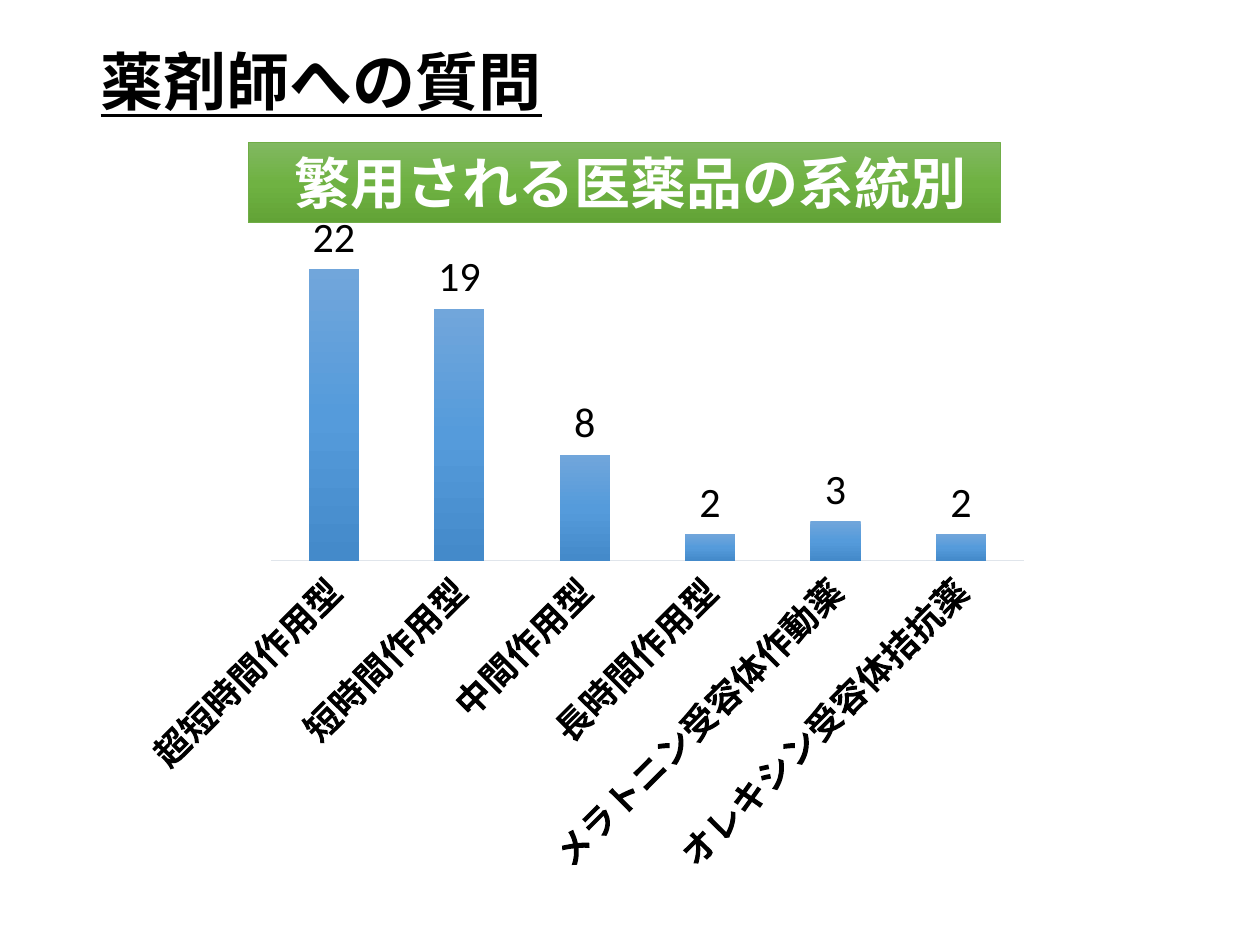
from copy import deepcopy

from pptx import Presentation
from pptx.chart.data import CategoryChartData
from pptx.dml.color import RGBColor
from pptx.enum.chart import XL_CHART_TYPE, XL_LABEL_POSITION, XL_TICK_MARK
from pptx.enum.shapes import MSO_SHAPE
from pptx.enum.text import MSO_AUTO_SIZE
from pptx.oxml.ns import qn
from pptx.util import Inches, Pt

TITLE = "薬剤師への質問"
BANNER = "繁用される医薬品の系統別"
COUNTS = {
    "超短時間作用型": 22,
    "短時間作用型": 19,
    "中間作用型": 8,
    "長時間作用型": 2,
    "メラトニン受容体作動薬": 3,
    "オレキシン受容体拮抗薬": 2,
}

FONT = "Calibri"
AUTO_ROTATION = "-60000000"
BLACK = RGBColor(0x00, 0x00, 0x00)
WHITE = RGBColor(0xFF, 0xFF, 0xFF)
GREEN = RGBColor(0x70, 0xAD, 0x47)
AXIS_GREY = RGBColor(0xE0, 0xE5, 0xEB)
GREENS = [RGBColor(0x81, 0xB8, 0x61), RGBColor(0x6F, 0xB2, 0x42), RGBColor(0x62, 0xA3, 0x36)]
BLUES = [RGBColor(0x71, 0xA6, 0xDB), RGBColor(0x55, 0x9B, 0xDB), RGBColor(0x44, 0x8A, 0xCA)]


def set_font(font, size, color, bold=False):
    font.name = FONT
    font.size = Pt(size)
    font.bold = bold
    font.color.rgb = color


def set_gradient(fill, sp_pr, colors):
    fill.gradient()
    fill.gradient_angle = 270
    stops = sp_pr.find(f"{qn('a:gradFill')}/{qn('a:gsLst')}")
    stops.insert(1, deepcopy(stops[0]))
    for i, (stop, color) in enumerate(zip(fill.gradient_stops, colors)):
        stop.position = i / (len(colors) - 1)
        stop.color.rgb = color


def add_text(s, text, box, size, color, wrap):
    tf = s.shapes.add_textbox(*map(Inches, box)).text_frame
    tf.word_wrap = wrap
    tf.auto_size = MSO_AUTO_SIZE.SHAPE_TO_FIT_TEXT
    p = tf.paragraphs[0]
    p.text = text
    set_font(p.font, size, color, True)
    return p


def add_counts_chart(s):
    data = CategoryChartData()
    data.categories = list(COUNTS)
    data.add_series("Series 1", list(COUNTS.values()))
    box = map(Inches, (0.97, 1.69, 7.3, 5.37))
    chart = s.shapes.add_chart(XL_CHART_TYPE.COLUMN_CLUSTERED, *box, data).chart
    chart.has_legend = False
    chart.has_title = False
    set_font(chart.font, 10, BLACK)

    values = chart.value_axis
    values.minimum_scale, values.maximum_scale = 0, 25
    values.has_major_gridlines = False
    values.visible = False

    cats = chart.category_axis
    cats.major_tick_mark = XL_TICK_MARK.NONE
    cats.format.line.color.rgb = AXIS_GREY
    cats.format.line.width = Pt(0.75)
    set_font(cats.tick_labels.font, 20, BLACK, True)
    body = cats._element.find(f"{qn('c:txPr')}/{qn('a:bodyPr')}")
    body.set("rot", AUTO_ROTATION)
    body.set("vert", "horz")

    plot = chart.plots[0]
    plot.gap_width = 150
    plot.vary_by_categories = False
    plot.has_data_labels = True
    labels = plot.data_labels
    labels.show_value = True
    labels.position = XL_LABEL_POSITION.OUTSIDE_END
    set_font(labels.font, 24, BLACK)
    series = plot.series[0]
    fill = series.format.fill
    set_gradient(fill, series._element.find(qn("c:spPr")), BLUES)


def main():
    prs = Presentation()
    prs.slide_width, prs.slide_height = Inches(10), Inches(7.5)
    s = prs.slides.add_slide(prs.slide_layouts[6])

    sp = s.shapes.add_shape(MSO_SHAPE.RECTANGLE, *map(Inches, (1.97, 1.13, 5.97, 0.64)))
    sp.shadow.inherit = False
    set_gradient(sp.fill, sp._element.spPr, GREENS)
    sp.line.color.rgb = GREEN
    sp.line.width = Pt(0.5)

    add_counts_chart(s)
    add_text(s, BANNER, (2.24, 1.13, 5.59, 0.64), 32, WHITE, True)
    p = add_text(s, TITLE, (0.7, 0.29, 3.75, 0.71), 36, BLACK, False)
    p.font.underline = True
    prs.save("out.pptx")


if __name__ == "__main__":
    main()
